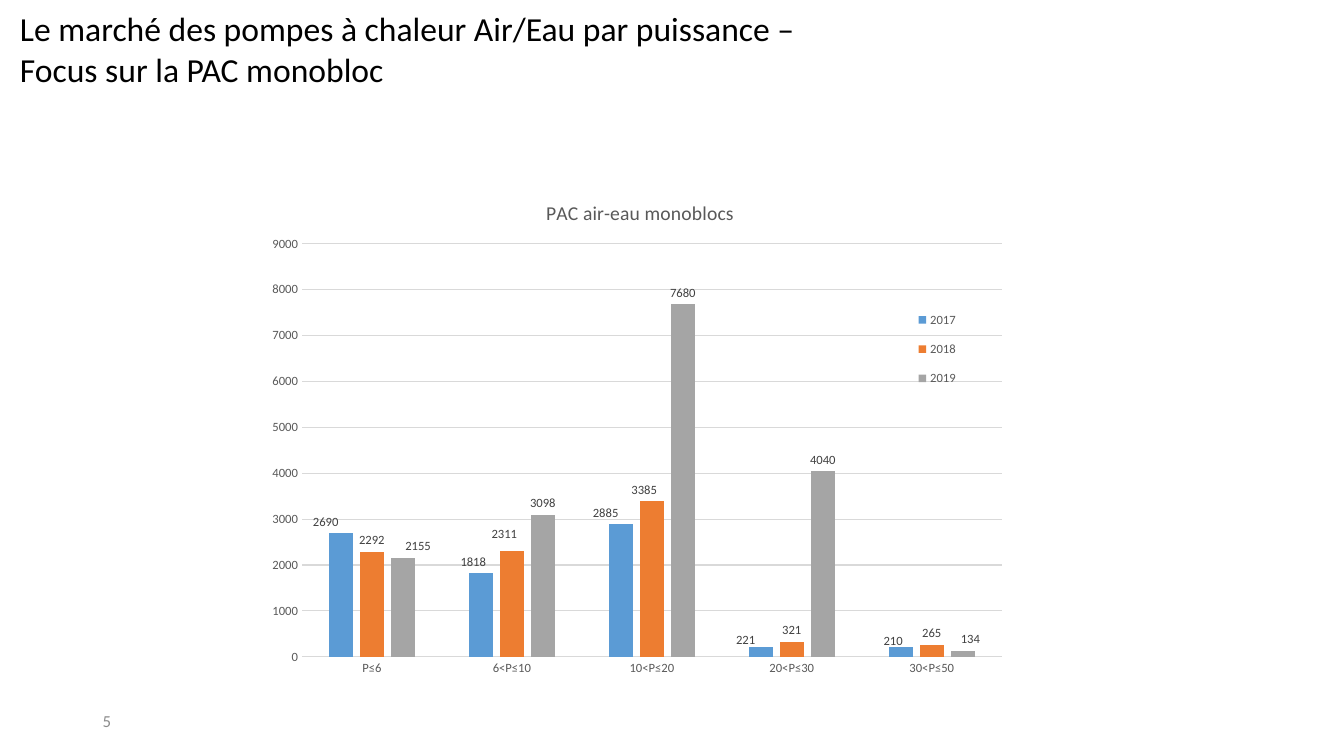
import pptx
import pptx.chart.data
import pptx.dml.color
import pptx.enum.chart
import pptx.enum.text
import pptx.oxml
import pptx.oxml.ns
import pptx.util
from pptx.util import Cm

FONT = "Calibri"
GREY, DARK_GREY, GRID = "595959", "404040", "D9D9D9"
POWER_BANDS = ["P≤6", "6<P≤10", "10<P≤20", "20<P≤30", "30<P≤50"]
SALES = {
    "2017": ([2690, 1818, 2885, 221, 210], "5B9BD5"),
    "2018": ([2292, 2311, 3385, 321, 265], "ED7D31"),
    "2019": ([2155, 3098, 7680, 4040, 134], "A5A5A5"),
}
# Label offsets as fractions of the chart: year -> {band index: (x, y)}
LABEL_SHIFTS = {
    "2017": {0: (-0.02, 0), 1: (-0.01, 0), 2: (-0.02, 0),
             3: (-0.02, 0.01), 4: (-0.01, 0.01)},
    "2018": {1: (-0.01, -0.01), 2: (-0.01, 0)},
    "2019": {0: (0.02, 0), 4: (0.01, 0)},
}


def rgb(color):
    return pptx.dml.color.RGBColor.from_string(color)


def style(font, size, color):
    font.name, font.size, font.bold = FONT, pptx.util.Pt(size), False
    font.color.rgb = rgb(color)


def style_line(line, color):
    line.color.rgb = rgb(color)
    line.width = pptx.util.Pt(0.75)


def set_layout(parent, index, **settings):
    """Give a chart part a manual layout, as its child number index."""
    for old in parent.xpath("c:layout"):
        parent.remove(old)
    children = "".join(f'<c:{key} val="{value}"/>' for key, value in settings.items())
    parent.insert(index, pptx.oxml.parse_xml(
        f'<c:layout {pptx.oxml.ns.nsdecls("c")}>'
        f"<c:manualLayout>{children}</c:manualLayout></c:layout>"))


def add_heading(slide, left, top, width, height):
    heading = slide.shapes.title
    heading.left, heading.top, heading.width, heading.height = left, top, width, height
    frame = heading.text_frame
    frame.text = "Le marché des pompes à chaleur Air/Eau par puissance – Focus sur la PAC monobloc"
    frame.word_wrap = True
    frame.auto_size = pptx.enum.text.MSO_AUTO_SIZE.NONE
    frame.vertical_anchor = pptx.enum.text.MSO_ANCHOR.TOP
    frame.paragraphs[0].alignment = pptx.enum.text.PP_ALIGN.LEFT
    style(frame.paragraphs[0].runs[0].font, 24, "000000")


def add_page_number(slide, left, top, width, height):
    frame = slide.shapes.add_textbox(left, top, width, height).text_frame
    frame.text = "5"
    frame.word_wrap = True
    frame.vertical_anchor = pptx.enum.text.MSO_ANCHOR.MIDDLE
    style(frame.paragraphs[0].runs[0].font, 12, "8C8C8C")


def style_axes(chart):
    for axis in (chart.category_axis, chart.value_axis):
        axis.major_tick_mark = axis.minor_tick_mark = pptx.enum.chart.XL_TICK_MARK.NONE
        style(axis.tick_labels.font, 9, GREY)
    style_line(chart.category_axis.format.line, GRID)
    sales_axis = chart.value_axis
    sales_axis.minimum_scale, sales_axis.maximum_scale, sales_axis.major_unit = 0, 9000, 1000
    sales_axis.format.line.fill.background()
    style_line(sales_axis.major_gridlines.format.line, GRID)


def style_series(year):
    outside = pptx.enum.chart.XL_LABEL_POSITION.OUTSIDE_END
    year.format.fill.solid()
    year.format.fill.fore_color.rgb = rgb(SALES[year.name][1])
    year.data_labels.show_value = True
    year.data_labels.position = outside
    style(year.data_labels.font, 9, DARK_GREY)
    for band, (x, y) in LABEL_SHIFTS[year.name].items():
        label = year.points[band].data_label
        style(label.font, 9, DARK_GREY)
        label.position = outside
        moved = year.data_labels._element.xpath(f"c:dLbl[c:idx/@val='{band}']")[0]
        set_layout(moved, 1, x=x, y=y)


def add_sales_chart(slide, left, top, width, height):
    sales = pptx.chart.data.CategoryChartData()
    sales.categories = POWER_BANDS
    for year, (values, _) in SALES.items():
        sales.add_series(year, values)
    chart = slide.shapes.add_chart(pptx.enum.chart.XL_CHART_TYPE.COLUMN_CLUSTERED,
                                   left, top, width, height, sales).chart
    style(chart.font, 10, "000000")

    # Columns and axes
    columns = chart.plots[0]
    columns.gap_width, columns.overlap, columns.vary_by_categories = 219, -27, False
    style_axes(chart)
    for year in columns.series:
        style_series(year)

    # Title and legend
    chart.has_title = True
    chart.chart_title.text_frame.text = "PAC air-eau monoblocs"
    style(chart.chart_title.text_frame.paragraphs[0].runs[0].font, 14, GREY)
    chart.has_legend = True
    chart.legend.position = pptx.enum.chart.XL_LEGEND_POSITION.CORNER
    chart.legend.include_in_layout = True
    style(chart.legend.font, 9, GREY)

    # Places inside the chart, as fractions of it
    part = {name: chart.element.xpath(f"c:chart/c:{name}")[0]
            for name in ("title", "plotArea", "legend")}
    edges = {"xMode": "edge", "yMode": "edge"}
    set_layout(part["title"], 1, **edges, x=0.375, y=0.04)
    set_layout(part["plotArea"], 0, layoutTarget="inner", **edges,
               x=0.058, y=0.134, w=0.922, h=0.808)
    set_layout(part["legend"], 1, **edges, x=0.86, y=0.24, w=0.07, h=0.2)


def main():
    deck = pptx.Presentation()
    deck.slide_width, deck.slide_height = Cm(33.87), Cm(19.05)
    slide = deck.slides.add_slide(deck.slide_layouts.get_by_name("Title Only"))
    add_heading(slide, Cm(0.25), Cm(0.08), Cm(21.72), Cm(2.31))
    add_sales_chart(slide, Cm(6.5), Cm(4.42), Cm(19.13), Cm(12.88))
    add_page_number(slide, Cm(2.34), Cm(17.65), Cm(7.62), Cm(1.02))
    deck.save("out.pptx")


if __name__ == "__main__":
    main()
